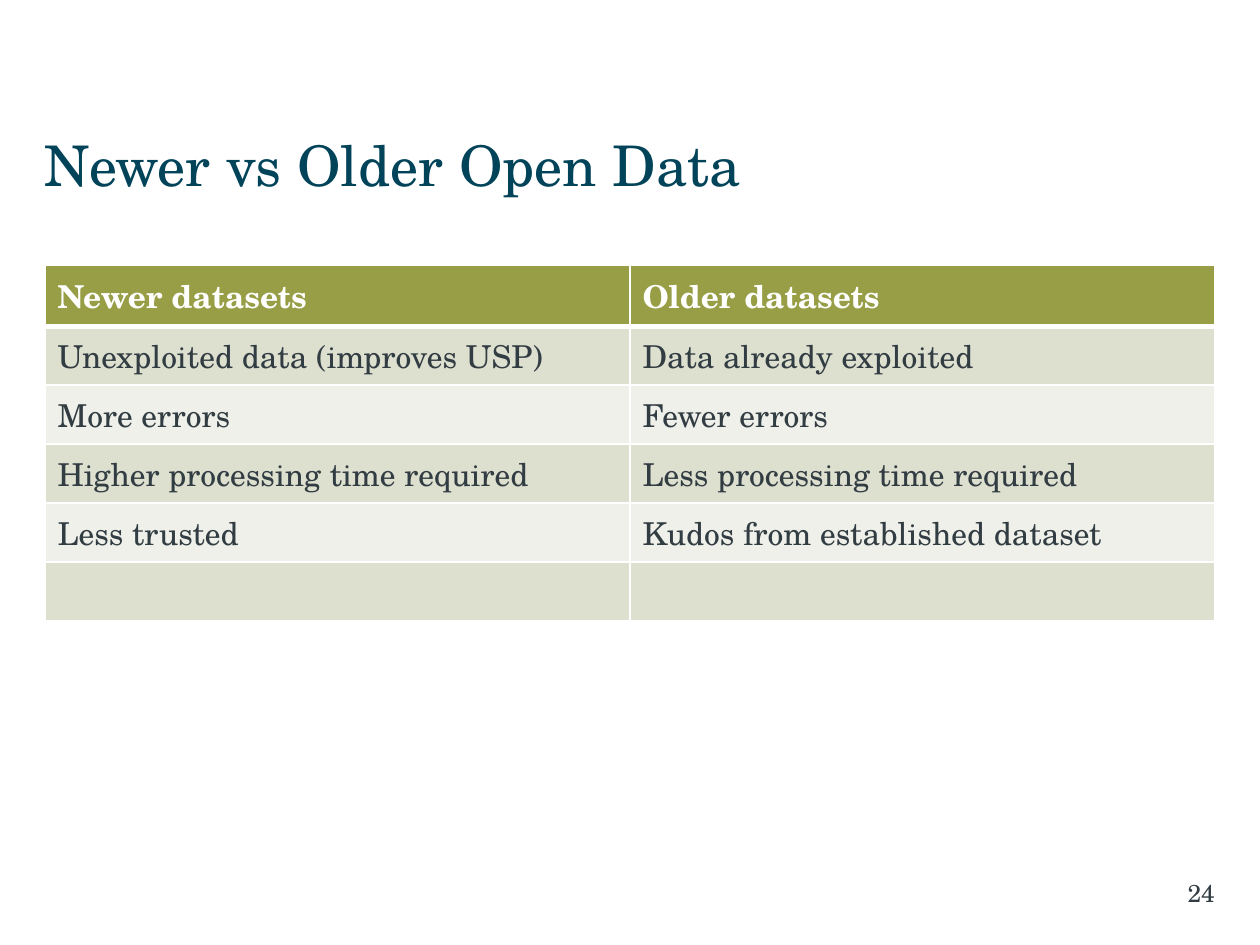
"""Build the slide that compares newer and older open data in a table."""
import pptx
import pptx.dml.color
import pptx.enum.text
import pptx.oxml.ns
import pptx.util
import lxml.etree

PX = 914400 // 126
FONT = "TeX Gyre Schola"
COLOURS = {
    "title": "014359",
    "text": "323D43",
    "white": "FFFFFF",
    "header": "979E45",
    "dark band": "DDDFCF",
    "light band": "EFF0E9",
}
ROWS = [
    ("Newer datasets", "Older datasets"),
    ("Unexploited data (improves USP)", "Data already exploited"),
    ("More errors", "Fewer errors"),
    ("Higher processing time required", "Less processing time required"),
    ("Less trusted", "Kudos from established dataset"),
    ("", ""),
]


def write(para, text, size, colour, bold=False):
    span = para.add_run()
    span.text = text
    for name, value in {"name": FONT, "size": pptx.util.Pt(size), "bold": bold}.items():
        setattr(span.font, name, value)
    span.font.color.rgb = pptx.dml.color.RGBColor.from_string(COLOURS[colour])


def add_xml(parent, tag, **attributes):
    return lxml.etree.SubElement(parent, pptx.oxml.ns.qn(tag), attributes)


deck = pptx.Presentation()
deck.slide_width = 1260 * PX
deck.slide_height = 945 * PX
page = deck.slides.add_slide(deck.slide_layouts[5])

title = page.shapes.title
number = page.shapes.add_textbox(0, 0, PX, PX)
align = pptx.enum.text.PP_ALIGN
texts = [
    (title, (45, 123, 1170, 90), (0, 13), align.LEFT, "Newer vs Older Open Data", 32, "title"),
    (number, (974, 871, 241, 43), (13, 0), align.RIGHT, "24", 14, "text"),
]
for box, place, margins, alignment, text, size, colour in texts:
    for name, value in zip(("left", "top", "width", "height"), place):
        setattr(box, name, value * PX)
    frame = box.text_frame
    formats = {
        "word_wrap": True,
        "auto_size": pptx.enum.text.MSO_AUTO_SIZE.NONE,
        "vertical_anchor": pptx.enum.text.MSO_ANCHOR.MIDDLE,
        "margin_left": margins[0] * PX,
        "margin_right": margins[1] * PX,
        "margin_top": 6 * PX,
        "margin_bottom": 6 * PX,
    }
    for name, value in formats.items():
        setattr(frame, name, value)
    para = frame.paragraphs[0]
    para.alignment = alignment
    write(para, text, size, colour)
title.text_frame.paragraphs[0].line_spacing = 0.9

table = page.shapes.add_table(len(ROWS), 2, 45 * PX, 265 * PX, 1170 * PX, 306 * PX).table
for row_index, row in enumerate(ROWS):
    table.rows[row_index].height = 51 * PX
    header = row_index == 0
    band = "header" if header else "dark band" if row_index % 2 else "light band"
    for column_index, text in enumerate(row):
        cell = table.cell(row_index, column_index)
        para = cell.text_frame.paragraphs[0]
        if text:
            write(para, text, 18, "white" if header else "text", header)
        else:
            ending = add_xml(para._p, "a:endParaRPr", sz="1800")
            add_xml(ending, "a:latin", typeface=FONT)
        properties = cell._tc.get_or_add_tcPr()
        for side in ("L", "R", "T", "B"):
            thick = (header and side == "B") or (row_index == 1 and side == "T")
            width = pptx.util.Pt(3 if thick else 1)
            border = add_xml(properties, f"a:ln{side}", w=str(int(width)))
            add_xml(add_xml(border, "a:solidFill"), "a:srgbClr", val=COLOURS["white"])
        cell.fill.solid()
        cell.fill.fore_color.rgb = pptx.dml.color.RGBColor.from_string(COLOURS[band])

deck.save("out.pptx")
